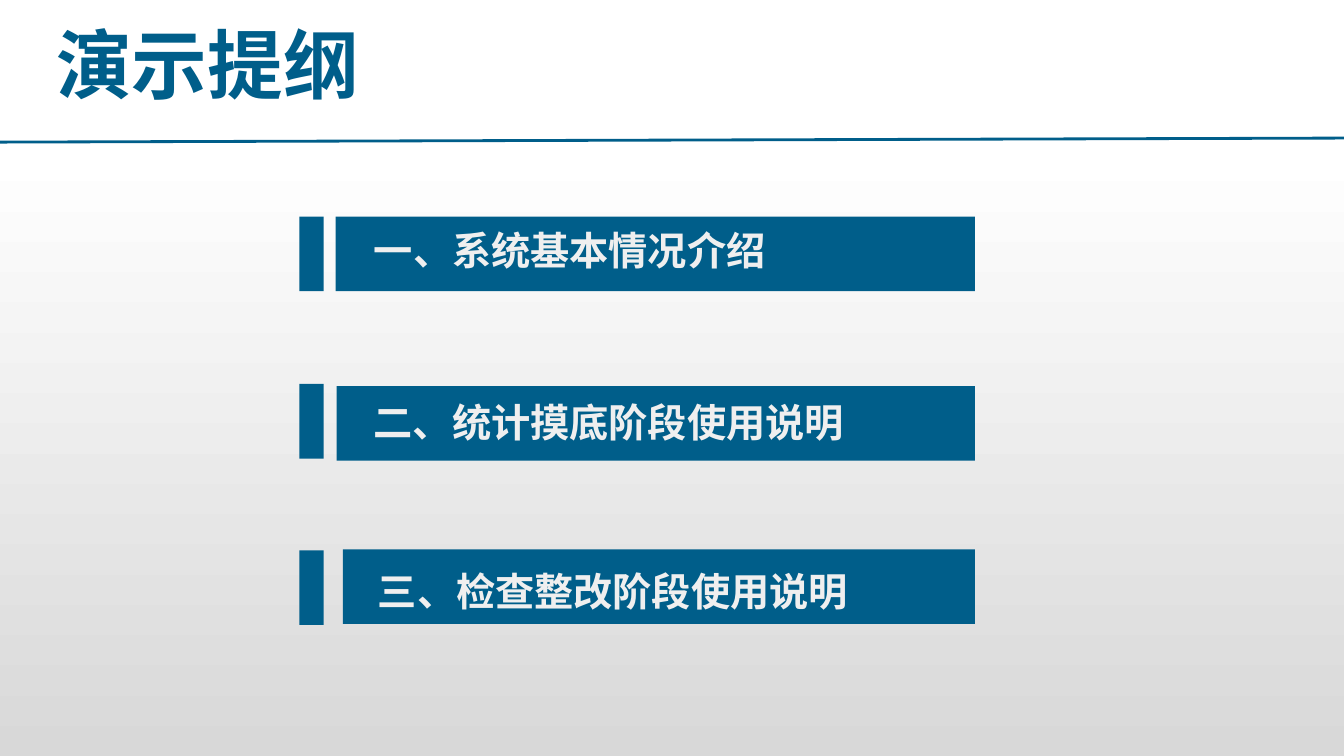
from lxml import etree
from pptx import Presentation
from pptx import util as u
from pptx.dml.color import RGBColor
from pptx.enum import shapes, text
from pptx.oxml.ns import qn

COLORS = {"blue": "005E8A", "pale": "EFEFEF", "white": "FFFFFF", "grey": "D8D8D8"}
FONT = "Noto Sans CJK SC"
BAR_HEIGHT = 0.74
BAR_RIGHT = 9.67

# Agenda: wording, tab top, bar left and top, text left, top and width
AGENDA = [
    ("一、系统基本情况介绍", 2.15, (3.33, 2.15), (3.61, 2.2, 7.81)),
    ("二、统计摸底阶段使用说明", 3.81, (3.34, 3.83), (3.61, 3.9, 8.37)),
    ("三、检查整改阶段使用说明", 5.46, (3.4, 5.45), (3.65, 5.58, 9.58)),
]


def rgb(name):
    return RGBColor.from_string(COLORS[name])


def set_background(slide):
    fill = slide.background.fill
    fill.gradient()
    fill.gradient_angle = 270
    stops = slide.element.find(".//" + qn("a:gsLst"))
    for stop in list(stops):
        stops.remove(stop)
    for percent, color in ((0, "white"), (20, "white"), (100, "grey")):
        stop = etree.SubElement(stops, qn("a:gs"), pos=str(percent * 1000))
        etree.SubElement(stop, qn("a:srgbClr"), val=COLORS[color])


def add_block(slide, left, top, width):
    sp = slide.shapes.add_shape(
        shapes.MSO_SHAPE.RECTANGLE,
        u.Inches(left), u.Inches(top), u.Inches(width), u.Inches(BAR_HEIGHT))
    sp.shadow.inherit = False
    sp.fill.solid()
    sp.fill.fore_color.rgb = rgb("blue")
    sp.line.fill.background()


def add_text(slide, wording, left, top, width, height, size, color):
    sp = slide.shapes.add_textbox(
        u.Inches(left), u.Inches(top), u.Inches(width), u.Inches(height))
    tf = sp.text_frame
    tf.word_wrap = True
    tf.auto_size = text.MSO_AUTO_SIZE.SHAPE_TO_FIT_TEXT
    r = tf.paragraphs[0].add_run()
    r.text = wording
    r.font.size = u.Pt(size)
    r.font.bold = True
    r.font.color.rgb = rgb(color)
    r.font.name = FONT
    # East Asian typeface
    etree.SubElement(r.font._element, qn("a:ea"), typeface=FONT)


def add_rule(slide, x1, y1, x2, y2):
    line = slide.shapes.add_connector(
        shapes.MSO_CONNECTOR.STRAIGHT,
        u.Inches(x1), u.Inches(y1), u.Inches(x2), u.Inches(y2))
    line.line.color.rgb = rgb("blue")
    line.line.width = u.Pt(2)
    etree.SubElement(line._element.spPr, qn("a:effectLst"))


def main():
    prs = Presentation()
    prs.slide_width = u.Inches(13.33)
    prs.slide_height = u.Inches(7.5)
    slide = prs.slides.add_slide(prs.slide_layouts[6])
    set_background(slide)

    # Title and rule
    add_text(slide, "演示提纲", 0.46, 0.13, 6.05, 1.01, 54, "blue")
    add_rule(slide, 0, 1.41, 13.33, 1.37)

    # Agenda rows
    for wording, tab_top, (bar_left, bar_top), (left, top, width) in AGENDA:
        add_block(slide, 2.97, tab_top, 0.24)
        add_block(slide, bar_left, bar_top, BAR_RIGHT - bar_left)
        add_text(slide, wording, left, top, width, 0.57, 28, "pale")

    prs.save("out.pptx")


if __name__ == "__main__":
    main()
